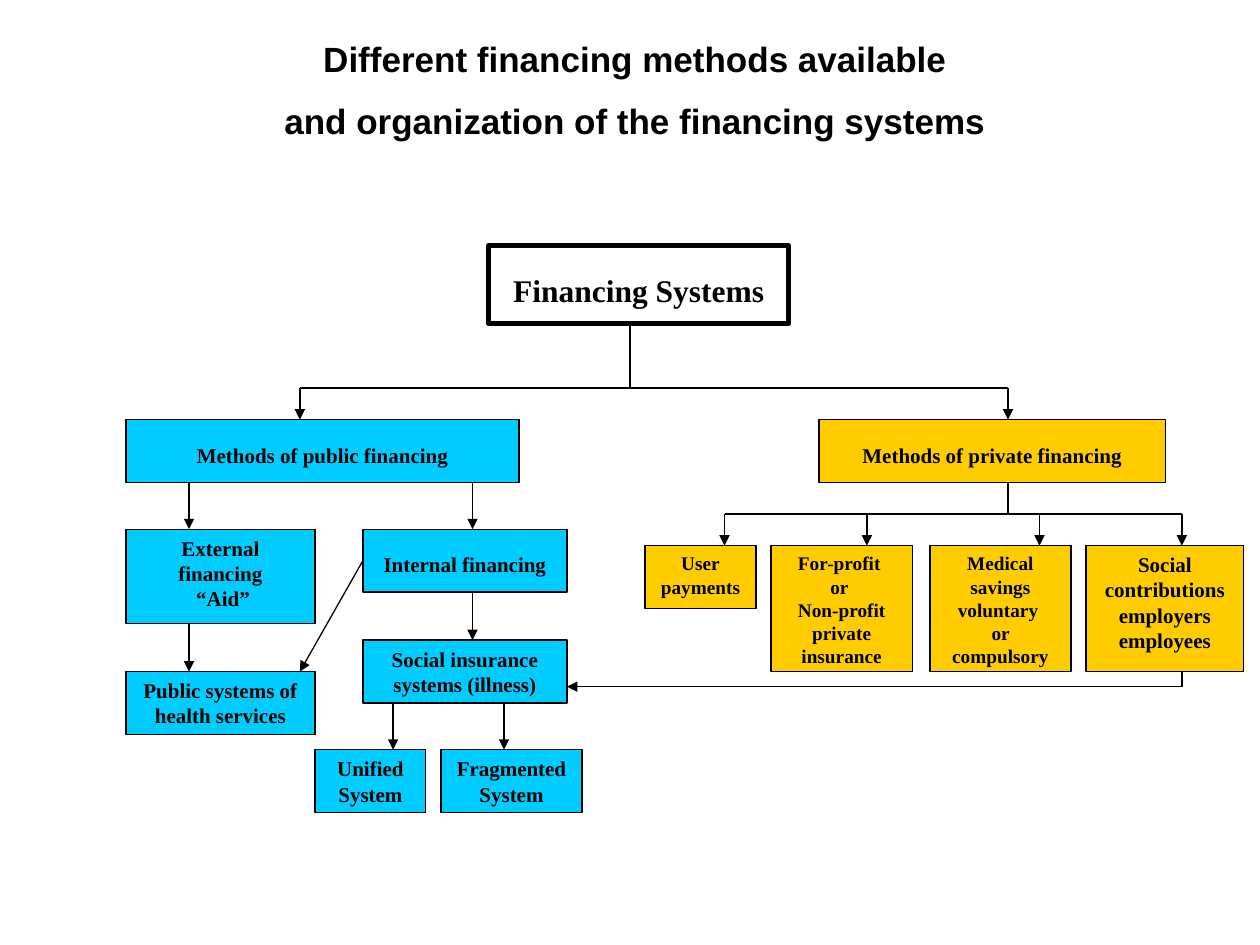
from dataclasses import dataclass

from lxml import etree
from pptx import Presentation
from pptx.dml.color import RGBColor
from pptx.enum.shapes import MSO_CONNECTOR, MSO_SHAPE
from pptx.enum.text import MSO_ANCHOR, PP_ALIGN
from pptx.oxml.ns import qn
from pptx.util import Inches, Pt

STRAIGHT = MSO_CONNECTOR.STRAIGHT
RECTANGLE = MSO_SHAPE.RECTANGLE
TOP = MSO_ANCHOR.TOP
CENTER = PP_ALIGN.CENTER
LEFT_SIDE = 1


@dataclass(frozen=True)
class Theme:
    black: RGBColor = RGBColor(0x00, 0x00, 0x00)
    white: RGBColor = RGBColor(0xFF, 0xFF, 0xFF)
    public: RGBColor = RGBColor(0x00, 0xCC, 0xFF)
    private: RGBColor = RGBColor(0xFF, 0xCC, 0x00)
    title_font: str = "Arial"
    box_font: str = "Times New Roman"
    title_size: float = 20
    root_size: float = 18
    box_size: float = 12
    small_size: float = 11
    thin: float = 0.75
    thick: float = 3


THEME = Theme()

TITLE = ["Different financing methods available",
         "and organization of the financing systems"]

# Heights where the levels of the tree start
METHODS_TOP, METHODS_BOTTOM = 3.33, 3.83
PUBLIC_TOP = 4.2
PRIVATE_TOP, PRIVATE_BOTTOM = 4.33, 5.33
SYSTEMS_TOP, SYSTEMS_BOTTOM = 5.95, 6.45
ROOT_BUS, PRIVATE_BUS, RETURN_BUS = 3.08, 4.08, 5.45
LOW_TEXT = 0.18

# left, top, width, height, paragraphs, top inset
PUBLIC_BOXES = [
    (1, METHODS_TOP, 3.12, 0.5, ["Methods of public financing"], LOW_TEXT),
    (1, PUBLIC_TOP, 1.5, 0.75, ["External financing", " “Aid”"], 0.05),
    (1, 5.33, 1.5, 0.5, ["Public systems of health services"], 0.05),
    (2.88, 5.08, 1.62, 0.5, ["Social insurance systems (illness)"], 0.05),
    (2.5, SYSTEMS_TOP, 0.88, 0.5, ["Unified System"], 0.05),
    (3.5, SYSTEMS_TOP, 1.12, 0.5, ["Fragmented System"], 0.05),
]

# left, width, height, paragraphs, type size
PRIVATE_BOXES = [
    (5.12, 0.88, 0.5, ["User", "payments"], THEME.small_size),
    (6.12, 1.12, 1, ["For-profit ", "or ", "Non-profit private insurance"],
     THEME.small_size),
    (7.38, 1.12, 1, ["Medical savings voluntary ", "or compulsory"],
     THEME.small_size),
    (8.62, 1.25, 1, ["Social contributions employers employees"],
     THEME.box_size),
]

# top, bottom, x positions of the vertical arrows
DROPS = [
    (ROOT_BUS, METHODS_TOP, [2.38, 8]),
    (METHODS_BOTTOM, PUBLIC_TOP, [1.5, 3.75]),
    (PRIVATE_BUS, PRIVATE_TOP, [5.75, 6.88, 8.25, 9.38]),
    (4.95, 5.33, [1.5]),
    (4.7, 5.08, [3.75]),
    (5.58, SYSTEMS_TOP, [3.12, 4]),
]

# Plain lines: start x, start y, end x, end y
PLAIN_LINES = [
    (5, 2.57, 5, ROOT_BUS),
    (2.38, ROOT_BUS, 8, ROOT_BUS),
    (8, METHODS_BOTTOM, 8, PRIVATE_BUS),
    (5.75, PRIVATE_BUS, 9.38, PRIVATE_BUS),
    (9.38, PRIVATE_BOTTOM, 9.38, RETURN_BUS),
]


def write_paragraphs(text_frame, texts, font_name, size, space_before=0):
    frame_format = {"word_wrap": True, "vertical_anchor": TOP}
    for name, value in frame_format.items():
        setattr(text_frame, name, value)
    font_format = {"name": font_name, "size": Pt(size), "bold": True}
    for index, text in enumerate(texts):
        paragraph = text_frame.add_paragraph() if index else text_frame.paragraphs[0]
        paragraph.alignment = CENTER
        if index and space_before:
            paragraph.space_before = Pt(space_before)
        run = paragraph.add_run()
        run.text = text
        for name, value in font_format.items():
            setattr(run.font, name, value)
        run.font.color.rgb = THEME.black


def add_title(slide):
    box = slide.shapes.add_textbox(Inches(0.33), Inches(0.25), Inches(9.42), Inches(3.39))
    write_paragraphs(box.text_frame, TITLE, THEME.title_font, THEME.title_size,
                     space_before=11.5)


def add_box(slide, left, top, width, height, texts, fill, size=THEME.box_size,
            top_inset=0.05, line_width=THEME.thin):
    shape = slide.shapes.add_shape(RECTANGLE, Inches(left), Inches(top),
                                   Inches(width), Inches(height))
    shape.shadow.inherit = False
    shape.fill.solid()
    shape.fill.fore_color.rgb = fill
    shape.line.color.rgb = THEME.black
    shape.line.width = Pt(line_width)
    shape.text_frame.margin_top = Inches(top_inset)
    write_paragraphs(shape.text_frame, texts, THEME.box_font, size)
    return shape


def add_line(slide, start_x, start_y, end_x, end_y, arrow=False):
    connector = slide.shapes.add_connector(STRAIGHT, Inches(start_x), Inches(start_y),
                                           Inches(end_x), Inches(end_y))
    connector.line.color.rgb = THEME.black
    connector.line.width = Pt(THEME.thin)
    if arrow:
        etree.SubElement(connector.line._get_or_add_ln(), qn("a:tailEnd"), type="triangle")
    etree.SubElement(connector._element.spPr, qn("a:effectLst"))
    return connector


def main():
    presentation = Presentation()
    presentation.slide_width = Inches(10)
    presentation.slide_height = Inches(7.5)
    slide = presentation.slides.add_slide(presentation.slide_layouts[6])

    add_title(slide)
    add_box(slide, 3.88, 1.95, 2.38, 0.62, ["Financing Systems"], THEME.white,
            THEME.root_size, top_inset=0.2, line_width=THEME.thick)
    for left, top, width, height, texts, inset in PUBLIC_BOXES:
        add_box(slide, left, top, width, height, texts, THEME.public, top_inset=inset)
    internal = add_box(slide, 2.88, PUBLIC_TOP, 1.62, 0.5, ["Internal financing"],
                       THEME.public, top_inset=LOW_TEXT)
    add_box(slide, 6.5, METHODS_TOP, 2.75, 0.5, ["Methods of private financing"],
            THEME.private, top_inset=LOW_TEXT)
    for left, width, height, texts, size in PRIVATE_BOXES:
        add_box(slide, left, PRIVATE_TOP, width, height, texts, THEME.private, size)

    for ends in PLAIN_LINES:
        add_line(slide, *ends)
    for top, bottom, positions in DROPS:
        for x in positions:
            add_line(slide, x, top, x, bottom, arrow=True)
    add_line(slide, 9.38, RETURN_BUS, 4.5, RETURN_BUS, arrow=True)
    to_health_services = add_line(slide, 2.88, 4.45, 2.38, 5.33, arrow=True)
    to_health_services.begin_connect(internal, LEFT_SIDE)

    presentation.save("out.pptx")


if __name__ == "__main__":
    main()
